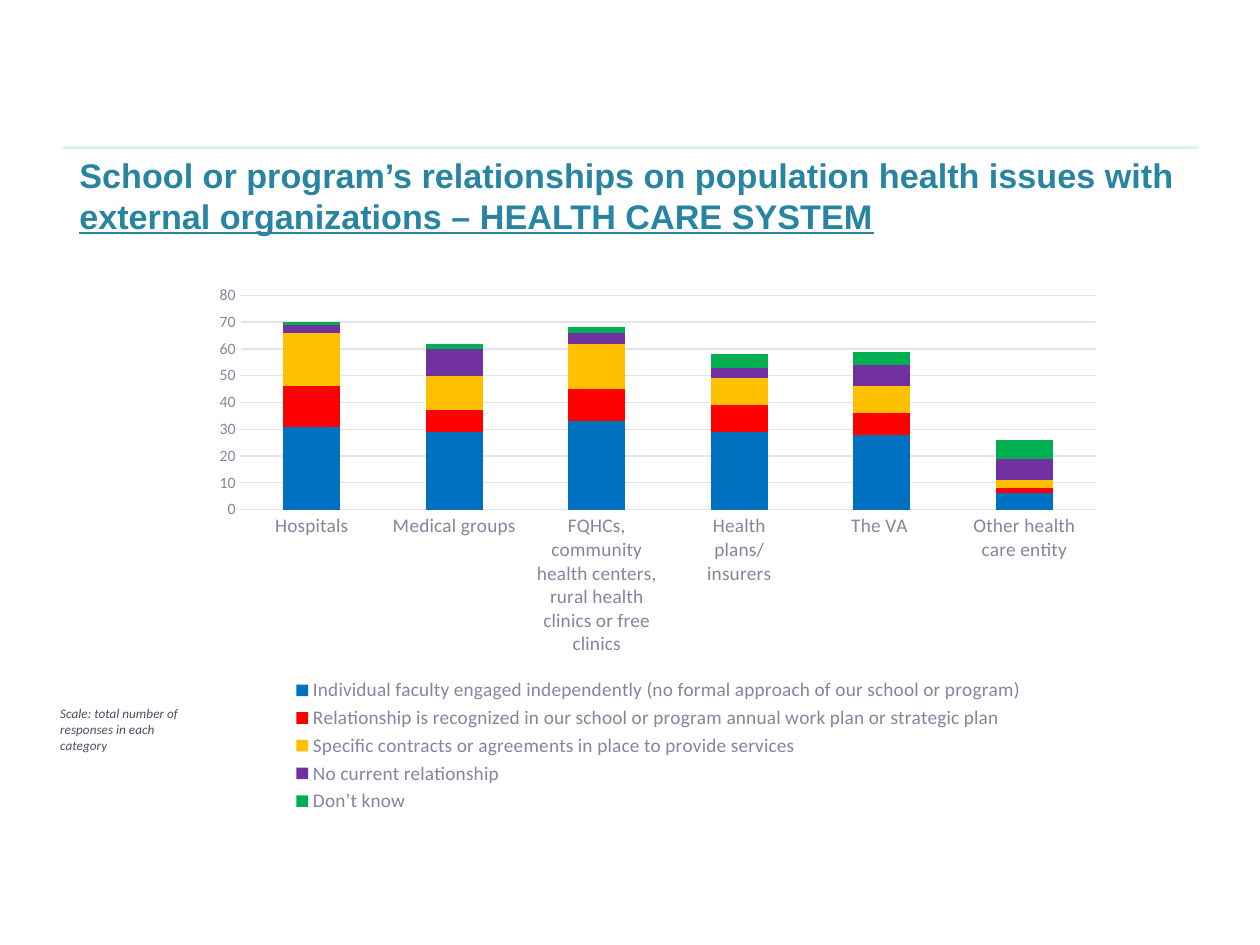
from lxml import etree
from pptx import Presentation
from pptx import util as u
from pptx.chart.data import CategoryChartData
from pptx.dml.color import RGBColor
from pptx.enum import chart as charts, shapes, text
from pptx.oxml import parse_xml
from pptx.oxml.ns import nsdecls, qn

COLORS = {"rule": "D6F5EF", "title": "2785A1", "note": "4C4C64", "label": "8484A1",
          "grid": "E3E3E9", "page": "FFFFFF"}
CATEGORIES = ["Hospitals", "Medical groups",
              "FQHCs, community health centers, rural health clinics or free clinics",
              "Health plans/insurers", "The VA ", "Other health care entity"]
SERIES = [
    ("Individual faculty engaged independently (no formal approach of our school or program)",
     [31, 29, 33, 29, 28, 6], "0070C0"),
    ("Relationship is recognized in our school or program annual work plan or strategic plan",
     [15, 8, 12, 10, 8, 2], "FF0000"),
    ("Specific contracts or agreements in place to provide services",
     [20, 13, 17, 10, 10, 3], "FFC000"),
    ("No current relationship", [3, 10, 4, 4, 8, 8], "7030A0"),
    ("Don’t know", [1, 2, 2, 5, 5, 7], "00B050"),
]


def rgb(name):
    return RGBColor.from_string(COLORS.get(name, name))


def inches(box):
    return [u.Inches(value) for value in box]


def style_font(font, size, color, name="Calibri", **flags):
    font.size, font.name = u.Pt(size), name
    font.color.rgb = rgb(color)
    for flag, value in flags.items():
        setattr(font, flag, value)


def add_text(para, words, **style):
    span = para.add_run()
    span.text = words
    style_font(span.font, **style)


def style_line(line, color, width):
    line.color.rgb = rgb(color)
    line.width = u.Pt(width)


def place_inside(element, before, x, y, w, h, inner=False):
    """Fix a chart part at shares of the chart's box."""
    for old in element.findall(qn("c:layout")):
        element.remove(old)
    target = '<c:layoutTarget val="inner"/>' if inner else ""
    sizes = "".join(f'<c:{key} val="{value}"/>' for key, value in zip("xywh", (x, y, w, h)))
    layout = parse_xml(f'<c:layout {nsdecls("c")}><c:manualLayout>{target}'
                       f'<c:xMode val="edge"/><c:yMode val="edge"/>{sizes}'
                       '</c:manualLayout></c:layout>')
    element.find(qn(before)).addprevious(layout)


def add_heading(page, box):
    left, top, width, height = box
    rule = page.shapes.add_connector(shapes.MSO_CONNECTOR.STRAIGHT,
                                     *inches((0.5, top - 0.08, 9.5, top - 0.08)))
    style_line(rule.line, "rule", 1.5)
    etree.SubElement(rule._element.spPr, qn("a:effectLst"))

    title = page.shapes.title
    title.left, title.top, title.width, title.height = inches(box)
    frame = title.text_frame
    frame.word_wrap = True
    frame.auto_size = text.MSO_AUTO_SIZE.NONE
    frame.vertical_anchor = text.MSO_ANCHOR.MIDDLE
    para = frame.paragraphs[0]
    para.alignment = text.PP_ALIGN.LEFT
    style = dict(size=19.5, color="title", name="Arial", bold=True)
    add_text(para, "School or program’s relationships on population health issues with ", **style)
    add_text(para, "external organizations – HEALTH CARE SYSTEM", underline=True, **style)


def add_response_chart(page, box):
    data = CategoryChartData()
    data.categories = CATEGORIES
    for name, values, _ in SERIES:
        data.add_series(name, values)
    chart = page.shapes.add_chart(charts.XL_CHART_TYPE.COLUMN_STACKED, *inches(box), data).chart
    chart.has_title = False
    style_font(chart.font, 10, "note")

    plot = chart.plots[0]
    plot.gap_width, plot.overlap, plot.vary_by_categories = 150, 100, False
    for series, (_, _, color) in zip(plot.series, SERIES):
        series.format.fill.solid()
        series.format.fill.fore_color.rgb = rgb(color)

    for axis, size in ((chart.category_axis, 11), (chart.value_axis, 9)):
        axis.major_tick_mark = axis.minor_tick_mark = charts.XL_TICK_MARK.NONE
        style_font(axis.tick_labels.font, size, "label")
    style_line(chart.category_axis.format.line, "grid", 0.75)
    values = chart.value_axis
    values.minimum_scale, values.maximum_scale, values.major_unit = 0, 80, 10
    values.format.line.fill.background()
    style_line(values.major_gridlines.format.line, "grid", 0.75)

    chart.has_legend = True
    legend = chart.legend
    legend.position = charts.XL_LEGEND_POSITION.BOTTOM
    legend.include_in_layout = False
    style_font(legend.font, 11, "label")
    place_inside(legend._element, "c:overlay", 0.09, 0.73, 0.82, 0.26)
    place_inside(plot._element.getparent(), "c:barChart", 0.04, 0.04, 0.94, 0.39, inner=True)


def add_scale_note(page, box):
    frame = page.shapes.add_textbox(*inches(box)).text_frame
    frame.word_wrap = True
    add_text(frame.paragraphs[0], "Scale: total number of responses in each category",
             size=7.5, color="note", italic=True)


def main():
    deck = Presentation()
    deck.slide_width, deck.slide_height = u.Inches(10), u.Inches(7.5)
    page = deck.slides.add_slide(deck.slide_layouts[5])
    page.background.fill.solid()
    page.background.fill.fore_color.rgb = rgb("page")
    add_heading(page, (0.53, 1.25, 9.19, 0.6))
    add_response_chart(page, (1.62, 2.17, 7.22, 4.36))
    add_scale_note(page, (0.38, 5.55, 1.34, 0.48))
    deck.save("out.pptx")


if __name__ == "__main__":
    main()
